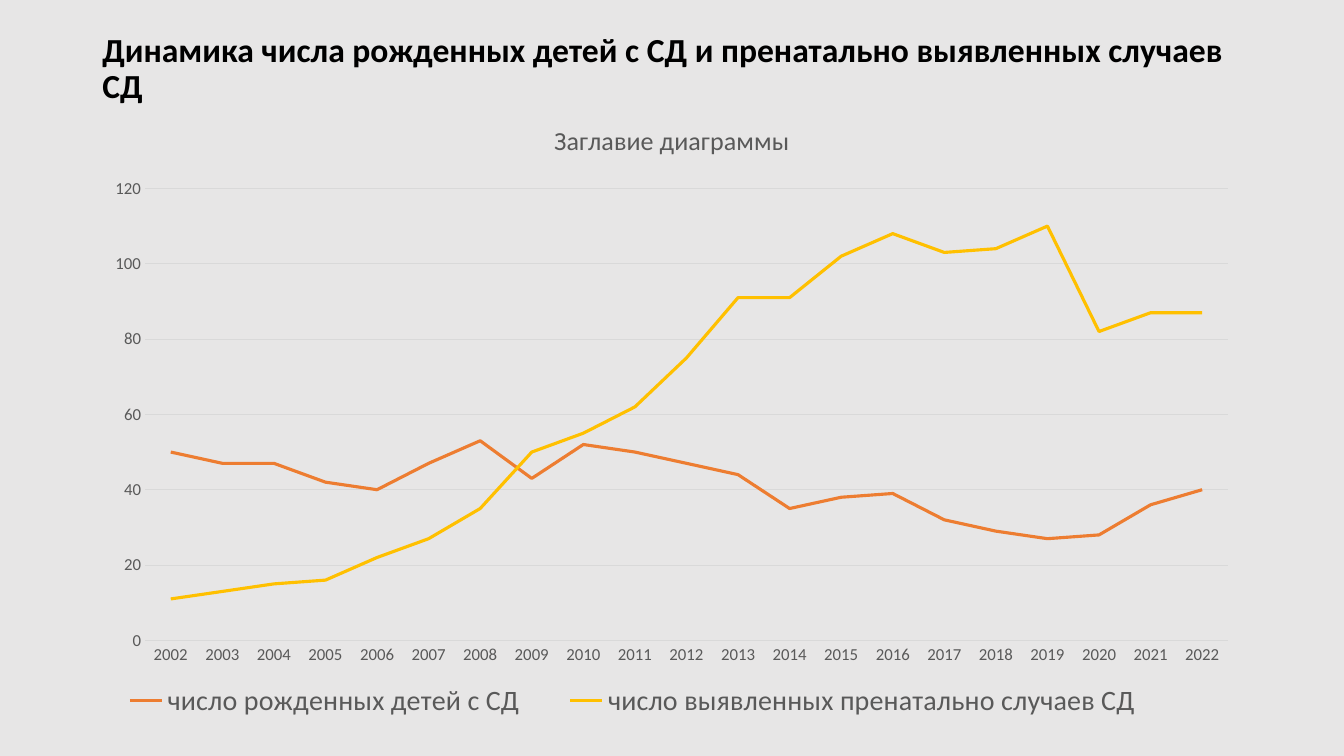
import lxml.etree
import pptx
import pptx.chart.data
import pptx.dml.color
import pptx.enum.chart
import pptx.enum.text
import pptx.oxml.ns
import pptx.util

Pt = pptx.util.Pt
qn = pptx.oxml.ns.qn
COLORS = {
    "background": "E7E6E6",
    "heading": "000000",
    "label": "595959",
    "grid": "D9D9D9",
    "births": "ED7D31",
    "detected": "FFC000",
}
# Left, top, width and height on the slide, in points
HEADING_BOX = (66, 28.5, 828, 42.5)
CHART_BOX = (66, 71.25, 828, 450.75)
PLOT_BOX = (103.6, 134.6, 773.6, 322.9)
LEGEND_BOX = (68, 486.5, 777, 28)

YEARS = [str(year) for year in range(2002, 2023)]
SERIES = [
    ("число рожденных детей с СД ", "births",
     [50, 47, 47, 42, 40, 47, 53, 43, 52, 50, 47,
      44, 35, 38, 39, 32, 29, 27, 28, 36, 40]),
    ("число выявленных пренатально случаев СД  ", "detected",
     [11, 13, 15, 16, 22, 27, 35, 50, 55, 62, 75,
      91, 91, 102, 108, 103, 104, 110, 82, 87, 87]),
]


class SlideBuilder:
    """Holds the shared style and the current slide."""

    font_name = "Calibri"

    def __init__(self, slide):
        self.slide = slide

    def color(self, name):
        return pptx.dml.color.RGBColor.from_string(COLORS[name])

    def style_font(self, font, size, color, bold=False):
        font.name = self.font_name
        font.size = Pt(size)
        font.bold = bold
        font.color.rgb = self.color(color)

    def style_line(self, line, color, width):
        line.color.rgb = self.color(color)
        line.width = Pt(width)

    def background(self, color):
        fill = self.slide.background.fill
        fill.solid()
        fill.fore_color.rgb = self.color(color)

    def heading(self, text, box):
        shape = self.slide.shapes.add_textbox(*map(Pt, box))
        frame = shape.text_frame
        frame.word_wrap = True
        frame.vertical_anchor = pptx.enum.text.MSO_ANCHOR.MIDDLE
        paragraph = frame.paragraphs[0]
        paragraph.text = text
        paragraph.line_spacing = 0.9
        self.style_font(paragraph.font, 24, "heading", bold=True)

    def place_part(self, part, box, chart_box, index, inner=False):
        """Fix a chart part at a slide position, as fractions of the chart."""
        for layout in part.findall(qn("c:layout")):
            part.remove(layout)
        layout = lxml.etree.Element(qn("c:layout"))
        manual = lxml.etree.SubElement(layout, qn("c:manualLayout"))
        left, top, width, height = box
        chart_left, chart_top, chart_width, chart_height = chart_box
        settings = [("layoutTarget", "inner")] if inner else []
        settings += [
            ("xMode", "edge"), ("yMode", "edge"),
            ("x", (left - chart_left) / chart_width),
            ("y", (top - chart_top) / chart_height),
            ("w", width / chart_width), ("h", height / chart_height),
        ]
        for name, value in settings:
            lxml.etree.SubElement(manual, qn("c:" + name)).set("val", str(value))
        part.insert(index, layout)

    def line_chart(self, title, categories, series, box, plot_box, legend_box):
        data = pptx.chart.data.CategoryChartData()
        data.categories = categories
        for name, _, values in series:
            data.add_series(name, values)
        chart = self.slide.shapes.add_chart(
            pptx.enum.chart.XL_CHART_TYPE.LINE, *map(Pt, box), data).chart

        # Title and legend
        chart.has_title = True
        paragraph = chart.chart_title.text_frame.paragraphs[0]
        paragraph.text = title
        self.style_font(paragraph.font, 18.6, "label")
        chart.chart_title.include_in_layout = False
        chart.has_legend = True
        chart.legend.position = pptx.enum.chart.XL_LEGEND_POSITION.BOTTOM
        chart.legend.include_in_layout = False
        self.style_font(chart.legend.font, 20, "label")

        # Axes
        for axis in (chart.category_axis, chart.value_axis):
            axis.major_tick_mark = pptx.enum.chart.XL_TICK_MARK.NONE
            axis.minor_tick_mark = pptx.enum.chart.XL_TICK_MARK.NONE
            self.style_font(axis.tick_labels.font, 12, "label")
        self.style_line(chart.category_axis.format.line, "grid", 0.75)
        chart.value_axis.format.line.fill.background()
        chart.value_axis.has_major_gridlines = True
        self.style_line(chart.value_axis.major_gridlines.format.line, "grid", 0.75)

        # Series lines
        chart.plots[0].vary_by_categories = False
        for plotted, (_, color, _) in zip(chart.plots[0].series, series):
            plotted.smooth = False
            plotted.marker.style = pptx.enum.chart.XL_MARKER_STYLE.NONE
            self.style_line(plotted.format.line, color, 2.25)

        # Plot and legend positions
        chart_element = chart.element.find(qn("c:chart"))
        self.place_part(chart_element.find(qn("c:plotArea")), plot_box, box, 0, inner=True)
        self.place_part(chart_element.find(qn("c:legend")), legend_box, box, 1)


def main():
    presentation = pptx.Presentation()
    presentation.slide_width = Pt(960)
    presentation.slide_height = Pt(540)
    slide = presentation.slides.add_slide(presentation.slide_layouts[6])
    builder = SlideBuilder(slide)

    builder.background("background")
    builder.heading(
        "Динамика числа рожденных детей с СД и пренатально выявленных случаев СД",
        HEADING_BOX)
    builder.line_chart("Заглавие диаграммы", YEARS, SERIES,
                       CHART_BOX, PLOT_BOX, LEGEND_BOX)
    presentation.save("out.pptx")


if __name__ == "__main__":
    main()
